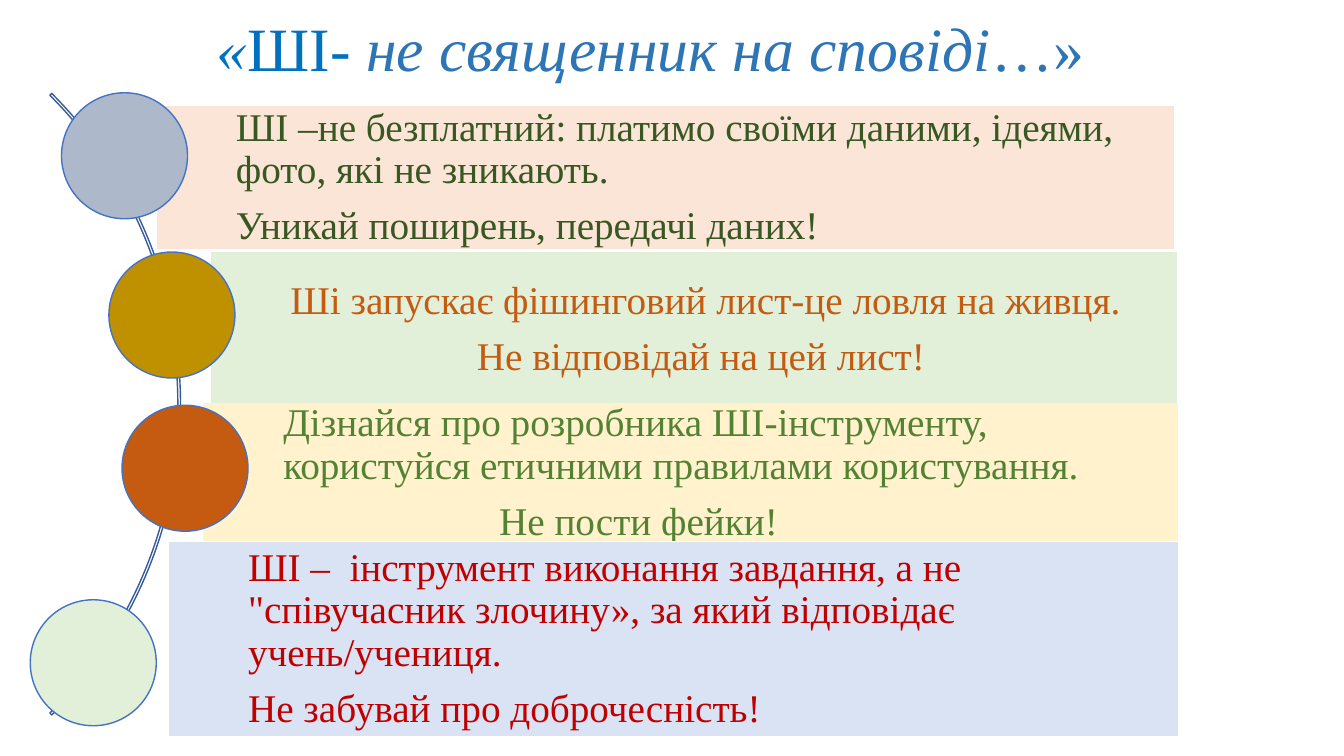
"""Build a slide of four coloured rules for using AI safely, set along an arc."""
from dataclasses import dataclass

from pptx import Presentation
from pptx.dml.color import RGBColor
from pptx.enum.shapes import MSO_SHAPE as Preset
from pptx.enum.text import MSO_ANCHOR as Anchor, PP_ALIGN as Align
from pptx.util import Inches, Pt

TITLE = [("«", "0070C0", True), ("ШІ- ", "0070C0", False),
         ("не священник на сповіді", "2E75B6", True), ("…»", "2E75B6", False)]
RULES = [
    dict(panel=(155, 105, 1010, 143), circle=(61, 92), fill="FBE5D6", edge="FFFFFF",
         ink="385723", dot="ADB9CA", indent=0,
         lines=("ШІ –не безплатний: платимо своїми даними, ідеями, фото, які не зникають.",
                "Уникай поширень, передачі даних!")),
    dict(panel=(209, 249, 959, 156), circle=(108, 250), fill="E2F0D9", edge="FFFFFF",
         ink="C55A11", dot="BF9000", indent=185,
         lines=("Ші запускає фішинговий лист-це ловля на живця.",
                "Не відповідай на цей лист!")),
    dict(panel=(202, 401, 966, 137), circle=(121, 402), fill="FFF2CC", edge="FFF2CC",
         ink="548235", dot="C55A11", indent=214,
         lines=("Дізнайся про розробника ШІ-інструменту, користуйся етичними правилами користування.",
                "Не пости фейки!")),
    dict(panel=(167, 537, 1002, 194), circle=(30, 595), fill="DAE3F3", edge="FFFFFF",
         ink="C00000", dot="E2F0D9", indent=0,
         lines=("ШІ –  інструмент виконання завдання, а не \"співучасник злочину», "
                "за який відповідає учень/учениця.",
                "Не забувай про доброчесність!")),
]


@dataclass(frozen=True)
class Theme:
    font: str = "Times New Roman"
    title_size: int = 44
    body_size: int = 28
    leading: float = 0.9
    gap: float = 0.35
    arc: str = "365B9D"
    outline: str = "4472C4"


THEME = Theme()
COLUMNS, ROWS = 1333, 750
CELL = Inches(13.33) // COLUMNS
TITLE_BOX = (92, 11, 1106, 81)
ARC_BOX = (-693, -35, 872, 872)
ARC_ANGLES_AND_BAND = (189, 27, 0.003)
DOT = 125
PAD_LEFT, PAD = 79, 8


def place(box):
    return [CELL * cells for cells in box]


def add_figure(slide, preset, box, fill, edge):
    shape = slide.shapes.add_shape(preset, *place(box))
    shape.shadow.inherit = False
    if fill:
        shape.fill.solid()
        shape.fill.fore_color.rgb = RGBColor.from_string(fill)
    else:
        shape.fill.background()
    shape.line.color.rgb = RGBColor.from_string(edge)
    shape.line.width = Pt(1)
    return shape


def write(paragraph, text, *, size, color, italic=False, align=Align.LEFT, after=0, indent=0):
    paragraph.alignment = align
    paragraph.line_spacing = THEME.leading
    paragraph.space_after = Pt(after)
    if indent:
        paragraph._p.get_or_add_pPr().set("marL", str(CELL * indent))
    run = paragraph.add_run()
    run.text = text
    run.font.name, run.font.size, run.font.italic = THEME.font, Pt(size), italic
    run.font.color.rgb = RGBColor.from_string(color)


def add_title(slide):
    frame = slide.shapes.add_textbox(*place(TITLE_BOX)).text_frame
    frame.word_wrap = True
    frame.vertical_anchor = Anchor.MIDDLE
    for text, color, italic in TITLE:
        write(frame.paragraphs[0], text, size=THEME.title_size, color=color,
              italic=italic, align=Align.CENTER)


def add_rule(slide, rule):
    panel = add_figure(slide, Preset.RECTANGLE, rule["panel"], rule["fill"], rule["edge"])
    frame = panel.text_frame
    frame.word_wrap = True
    frame.vertical_anchor = Anchor.MIDDLE
    frame.margin_left = CELL * PAD_LEFT
    frame.margin_top = frame.margin_right = frame.margin_bottom = CELL * PAD
    advice, warning = rule["lines"]
    style = dict(size=THEME.body_size, color=rule["ink"], after=THEME.body_size * THEME.gap)
    write(frame.paragraphs[0], advice, **style)
    write(frame.add_paragraph(), warning, indent=rule["indent"], **style)
    add_figure(slide, Preset.OVAL, (*rule["circle"], DOT, DOT), rule["dot"], THEME.outline)


def main():
    presentation = Presentation()
    presentation.slide_width, presentation.slide_height = CELL * COLUMNS, CELL * ROWS
    slide = presentation.slides.add_slide(presentation.slide_layouts[6])
    add_title(slide)
    arc = add_figure(slide, Preset.BLOCK_ARC, ARC_BOX, None, THEME.arc)
    for index, value in enumerate(ARC_ANGLES_AND_BAND):
        arc.adjustments[index] = value
    for rule in RULES:
        add_rule(slide, rule)
    presentation.save("out.pptx")


if __name__ == "__main__":
    main()
